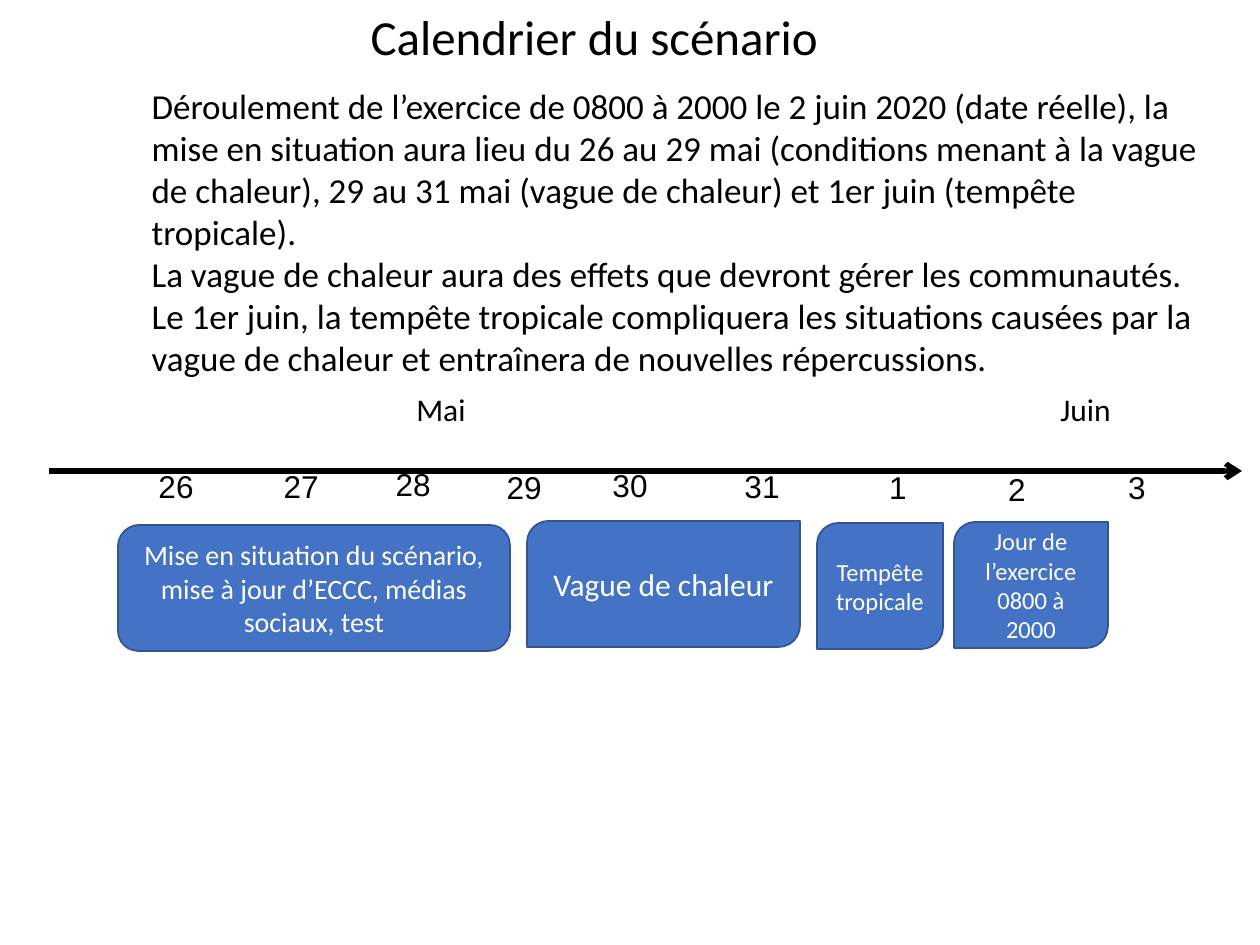
from lxml import etree
from pptx import Presentation
from pptx.dml.color import RGBColor
from pptx.enum.shapes import MSO_CONNECTOR, MSO_SHAPE
from pptx.enum.text import MSO_ANCHOR, MSO_AUTO_SIZE, PP_ALIGN
from pptx.oxml.ns import qn
from pptx.util import Emu, Inches, Pt

LEFT, CENTER = PP_ALIGN.LEFT, PP_ALIGN.CENTER
TOP, MIDDLE = MSO_ANCHOR.TOP, MSO_ANCHOR.MIDDLE
NO_AUTOFIT = MSO_AUTO_SIZE.NONE
STRAIGHT = MSO_CONNECTOR.STRAIGHT
DIAGONAL_ROUND = MSO_SHAPE.ROUND_2_DIAG_RECTANGLE

EMU_PER_PX = 914400 / 126
BLACK, WHITE, BLUE, DARK_BLUE = "000000", "FFFFFF", "4472C4", "325491"

TITLE = "Calendrier du scénario"
SUMMARY = [
    "Déroulement de l’exercice de 0800 à 2000 le 2 juin 2020 (date réelle), "
    "la mise en situation aura lieu du 26 au 29 mai (conditions menant à la "
    "vague de chaleur), 29 au 31 mai (vague de chaleur) et 1er juin "
    "(tempête tropicale).",
    "La vague de chaleur aura des effets que devront gérer les communautés. "
    "Le 1er juin, la tempête tropicale compliquera les situations causées "
    "par la vague de chaleur et entraînera de nouvelles répercussions.",
]
MONTHS = [("Mai", 404), ("Juin", 1048)]
# day, centre, top
DAYS = [
    ("26", 176, 461), ("27", 301, 461), ("28", 413, 459),
    ("29", 524, 462), ("30", 630, 460), ("31", 762, 461),
    ("1", 898, 462), ("2", 1017, 464), ("3", 1137, 462),
]
DAY_WIDTH, LABEL_HEIGHT = 70, 50
# text, left, top, width, size, corner adjustments
PHASES = [
    ("Mise en situation du scénario, mise à jour d’ECCC, médias sociaux, test",
     118, 525, 392, 16, (0.17, 0.16)),
    ("Vague de chaleur", 527, 521, 273, 18, (0.17, 0)),
    ("Tempête tropicale", 817, 523, 126, 14, (0.17, 0)),
    ("Jour de l’exercice 0800 à 2000", 954, 522, 154, 14, (0.17, 0)),
]
PHASE_HEIGHT = 126


def px(value):
    return Emu(round(value * EMU_PER_PX))


def color(value):
    return RGBColor.from_string(value)


def place(shape, left, top, width, height):
    shape.left, shape.top = px(left), px(top)
    shape.width, shape.height = px(width), px(height)


def write(shape, paragraphs, size=18, font="Calibri", fill=BLACK,
          align=LEFT, anchor=TOP, indent=None):
    """Fill a shape with paragraphs; indent, in inches, gives a list without bullets."""
    frame = shape.text_frame
    frame.word_wrap = True
    frame.auto_size = NO_AUTOFIT
    frame.vertical_anchor = anchor
    for index, text in enumerate(paragraphs):
        paragraph = frame.paragraphs[0] if index == 0 else frame.add_paragraph()
        paragraph.text = text
        paragraph.alignment = align
        paragraph.space_before = Pt(0)
        if indent is not None:
            paragraph.level = 2
            properties = paragraph._p.get_or_add_pPr()
            properties.set("marL", str(Inches(indent)))
            properties.set("indent", "0")
            etree.SubElement(properties, qn("a:buNone"))
        paragraph.font.size = Pt(size)
        paragraph.font.name = font
        paragraph.font.color.rgb = color(fill)


def add_label(slide, text, left, top, width, **text_format):
    label = slide.shapes.add_textbox(px(left), px(top), px(width), px(LABEL_HEIGHT))
    write(label, [text], **text_format)


def add_time_axis(slide, start, end, y):
    axis = slide.shapes.add_connector(STRAIGHT, px(start), px(y), px(end), px(y))
    axis.line.color.rgb = color(BLACK)
    axis.line.width = Pt(3)
    etree.SubElement(axis.line._get_or_add_ln(), qn("a:tailEnd"), type="arrow")
    etree.SubElement(axis._element.spPr, qn("a:effectLst"))


def add_phase(slide, text, left, top, width, size, corners):
    phase = slide.shapes.add_shape(
        DIAGONAL_ROUND, px(left), px(top), px(width), px(PHASE_HEIGHT))
    for index, corner in enumerate(corners):
        phase.adjustments[index] = corner
    phase.shadow.inherit = False
    phase.fill.solid()
    phase.fill.fore_color.rgb = color(BLUE)
    phase.line.color.rgb = color(DARK_BLUE)
    phase.line.width = Pt(1)
    write(phase, [text], size=size, fill=WHITE, align=CENTER, anchor=MIDDLE)


def main():
    deck = Presentation()
    deck.slide_width, deck.slide_height = Inches(10), Inches(7.5)
    slide = deck.slides.add_slide(deck.slide_layouts[1])

    title, summary = slide.placeholders
    place(title, 358, 0, 722, 72)
    write(title, [TITLE], size=28)
    place(summary, 13, 78, 1216, 352)
    write(summary, SUMMARY, size=20, indent=1)

    add_time_axis(slide, 49, 1242, 471)
    for month, left in MONTHS:
        add_label(slide, month, left, 384, 100)
    for day, center, top in DAYS:
        add_label(slide, day, center - DAY_WIDTH / 2, top, DAY_WIDTH,
                  font="Arial", align=CENTER)
    for phase in PHASES:
        add_phase(slide, *phase)

    deck.save("out.pptx")


if __name__ == "__main__":
    main()
